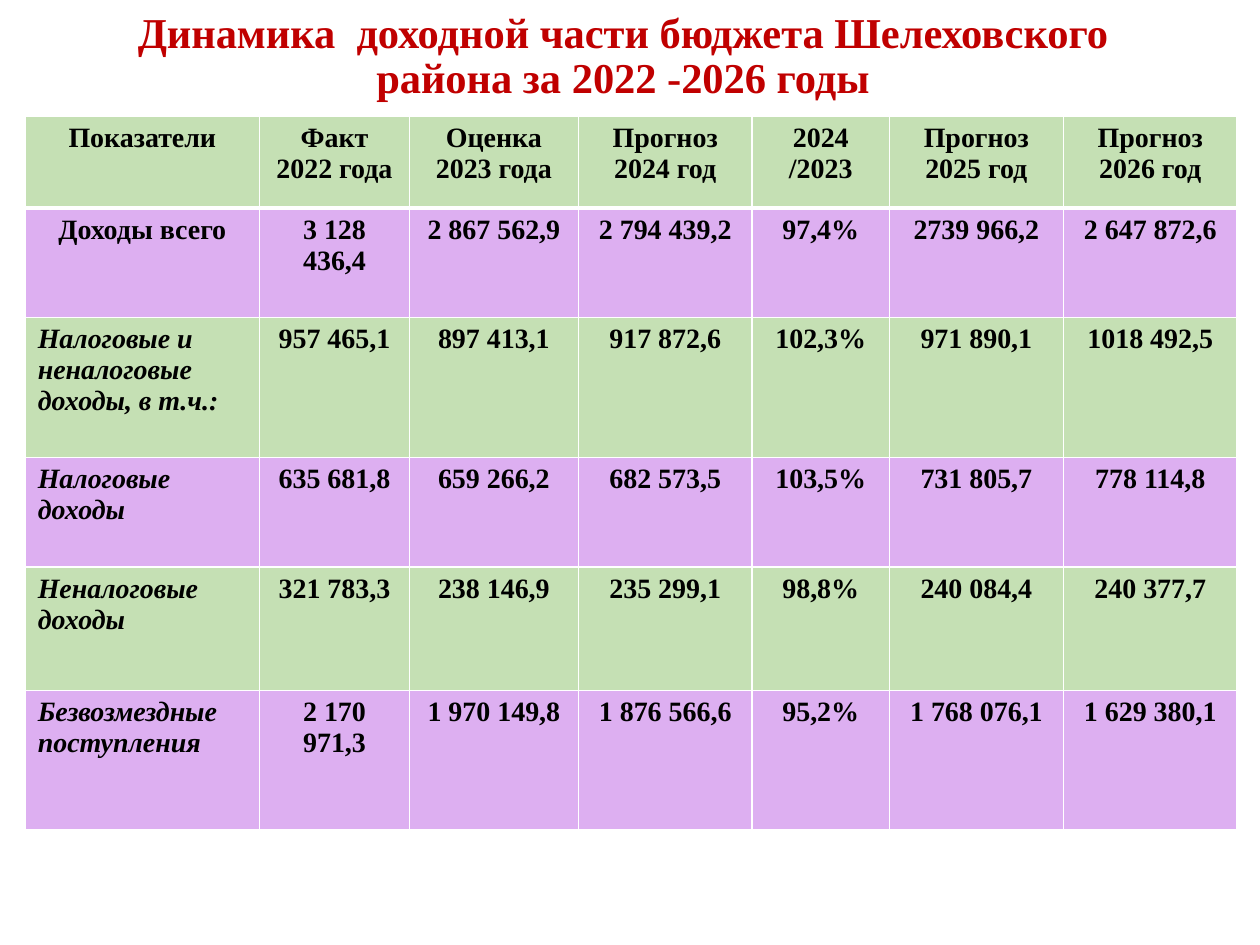
from lxml.etree import SubElement
from pptx import Presentation
from pptx.dml.color import RGBColor
from pptx.enum.text import MSO_ANCHOR, PP_ALIGN
from pptx.oxml.ns import qn
from pptx.util import Inches, Pt

COLORS = {"title": "C00000", "text": "000000", "paper": "FFFFFF",
          "green": "C5E0B4", "violet": "DDAFF1"}
FONT = "Times New Roman"
TITLE = "Динамика  доходной части бюджета Шелеховского района за 2022 -2026 годы"
COLUMN_WIDTHS = [1.86, 1.19, 1.34, 1.38, 1.09, 1.38, 1.38]
ROW_HEIGHTS = [0.73, 0.87, 1.11, 0.87, 0.98, 1.11]
# A line feed inside a cell starts a new paragraph.
BUDGET = [
    ["Показатели", "Факт 2022 года", "Оценка\n2023 года", "Прогноз\n2024 год",
     "2024\n/2023", "Прогноз\n2025 год", "Прогноз\n2026 год"],
    ["Доходы всего", "3 128 436,4", "2 867 562,9", "2 794 439,2",
     "97,4%", "2739 966,2", "2 647 872,6"],
    ["Налоговые и неналоговые доходы, в т.ч.:", "957 465,1", "897 413,1", "917 872,6",
     "102,3%", "971 890,1", "1018 492,5"],
    ["Налоговые\nдоходы", "635 681,8", "659 266,2", "682 573,5",
     "103,5%", "731 805,7", "778 114,8"],
    ["Неналоговые\nдоходы", "321 783,3", "238 146,9", "235 299,1",
     "98,8%", "240 084,4", "240 377,7"],
    ["Безвозмездные\nпоступления", "2 170 971,3", "1 970 149,8", "1 876 566,6",
     "95,2%", "1 768 076,1", "1 629 380,1"],
]


def rgb(name):
    return RGBColor.from_string(COLORS[name])


def add_run(paragraph, text, size, color, italic=False):
    run = paragraph.add_run()
    run.text = text
    font = run.font
    font.name, font.size, font.bold, font.italic = FONT, Pt(size), True, italic
    font.color.rgb = rgb(color)


def add_title(slide, left, top, width, height):
    title = slide.shapes.add_textbox(Inches(left), Inches(top), Inches(width), Inches(height))
    title.fill.solid()
    title.fill.fore_color.rgb = rgb("paper")
    frame = title.text_frame
    frame.word_wrap = True
    frame.vertical_anchor = MSO_ANCHOR.TOP
    frame.margin_top = frame.margin_bottom = 0
    frame.margin_left = frame.margin_right = Inches(0.2)
    heading = frame.paragraphs[0]
    heading.alignment = PP_ALIGN.CENTER
    heading.line_spacing = 0.9
    add_run(heading, TITLE, 24.3, "title")


def set_borders(cell, **widths):
    """Draw white cell edges; widths in points are keyed by L, R, T, B in that order."""
    properties = cell._tc.get_or_add_tcPr()
    for side, width in widths.items():
        edge = SubElement(properties, qn(f"a:ln{side}"), w=str(Pt(width)))
        fill = SubElement(edge, qn("a:solidFill"))
        SubElement(fill, qn("a:srgbClr"), val=COLORS["paper"])


def fill_cell(cell, text, row, column):
    set_borders(cell, L=1, R=1, T=3 if row == 1 else 1, B=3 if row == 0 else 1)
    cell.fill.solid()
    cell.fill.fore_color.rgb = rgb("violet" if row % 2 else "green")
    is_detail_label = column == 0 and row > 1
    frame = cell.text_frame
    for index, line in enumerate(text.split("\n")):
        paragraph = frame.add_paragraph() if index else frame.paragraphs[0]
        paragraph.alignment = PP_ALIGN.LEFT if is_detail_label else PP_ALIGN.CENTER
        add_run(paragraph, line, 16, "text", italic=is_detail_label)


def add_budget_table(slide, left, top):
    table = slide.shapes.add_table(
        len(ROW_HEIGHTS), len(COLUMN_WIDTHS), Inches(left), Inches(top),
        Inches(sum(COLUMN_WIDTHS)), Inches(sum(ROW_HEIGHTS))).table
    for column, width in zip(table.columns, COLUMN_WIDTHS):
        column.width = Inches(width)
    for row, height in zip(table.rows, ROW_HEIGHTS):
        row.height = Inches(height)
    for row, texts in enumerate(BUDGET):
        for column, text in enumerate(texts):
            fill_cell(table.cell(row, column), text, row, column)


def main():
    deck = Presentation()
    deck.slide_width, deck.slide_height = Inches(10), Inches(7.5)
    slide = deck.slides.add_slide(deck.slide_layouts[6])
    add_title(slide, 0.43, 0.09, 9.03, 1.1)
    add_budget_table(slide, 0.2, 0.92)
    deck.save("out.pptx")


if __name__ == "__main__":
    main()
